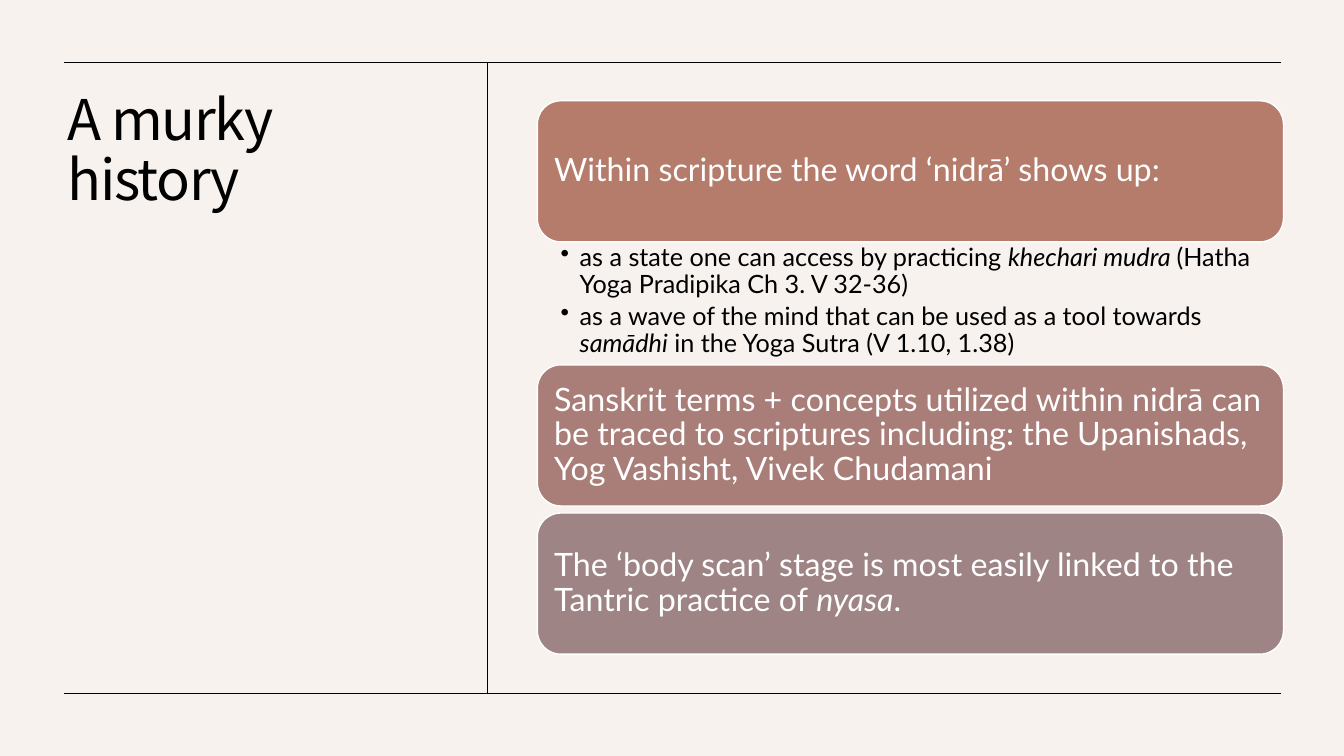
from dataclasses import dataclass

from lxml import etree
from pptx import Presentation
from pptx.dml.color import RGBColor
from pptx.enum import shapes, text
from pptx.oxml import ns
from pptx.util import Inches, Pt


@dataclass(frozen=True)
class Theme:
    background: str = "F7F2EE"
    ink: str = "000000"
    light: str = "FFFFFF"
    title_font: str = "Noto Sans CJK KR"
    body_font: str = "Lato"
    title_size: int = 40
    card_size: int = 23
    bullet_size: int = 18


theme = Theme()


def set_margins(frame, left, top, right, bottom):
    frame.word_wrap = True
    frame.auto_size = text.MSO_AUTO_SIZE.NONE
    frame.margin_left, frame.margin_top = Inches(left), Inches(top)
    frame.margin_right, frame.margin_bottom = Inches(right), Inches(bottom)


def add_runs(paragraph, pieces, font, size, color):
    """Fill a left-aligned paragraph; every second piece is italic."""
    paragraph.alignment = text.PP_ALIGN.LEFT
    paragraph.line_spacing = 0.9
    for index, piece in enumerate(pieces):
        run = paragraph.add_run()
        run.text = piece
        run.font.name = font
        run.font.size = Pt(size)
        run.font.italic = index % 2 == 1
        run.font.color.rgb = RGBColor.from_string(color)


presentation = Presentation()
presentation.slide_width = Inches(13.33)
presentation.slide_height = Inches(7.5)
slide = presentation.slides.add_slide(presentation.slide_layouts[5])
slide.background.fill.solid()
slide.background.fill.fore_color.rgb = RGBColor.from_string(theme.background)

# Title
title = slide.shapes.title
title.left, title.top = Inches(0.57), Inches(0.86)
title.width, title.height = Inches(3.77), Inches(5.52)
set_margins(title.text_frame, 0.1, 0.05, 0.1, 0.05)
title.text_frame.vertical_anchor = text.MSO_ANCHOR.TOP
title_paragraph = title.text_frame.paragraphs[0]
add_runs(title_paragraph, ["A murky history"], theme.title_font, theme.title_size, theme.ink)
title_paragraph.runs[0].font._element.set("spc", "-100")

# Frame rules
left, right, top, bottom, divider = 0.63, 12.71, 0.62, 6.88, 4.83
for x1, y1, x2, y2 in [
    (left, bottom, right, bottom),
    (divider, top, divider, bottom),
    (left, top, right, top),
]:
    rule = slide.shapes.add_connector(
        shapes.MSO_CONNECTOR.STRAIGHT, Inches(x1), Inches(y1), Inches(x2), Inches(y2))
    rule.line.color.rgb = RGBColor.from_string(theme.ink)
    rule.line.width = Pt(0.5)
    etree.SubElement(rule._element.spPr, ns.qn("a:effectLst"))

# Cards
column_left, column_width, card_height = Inches(5.33), Inches(7.4), Inches(1.4)
cards = [
    (1, "B57B6B", ["Within scripture the word ‘nidrā’ shows up:"]),
    (3.62, "A97D78", ["Sanskrit terms + concepts utilized within nidrā can be traced to "
                      "scriptures including: the Upanishads, Yog Vashisht, Vivek Chudamani"]),
    (5.09, "9E8484", ["The ‘body scan’ stage is most easily linked to the Tantric practice of ",
                      "nyasa", "."]),
]
for card_top, fill, pieces in cards:
    card = slide.shapes.add_shape(
        shapes.MSO_SHAPE.ROUNDED_RECTANGLE,
        column_left, Inches(card_top), column_width, card_height)
    card.shadow.inherit = False
    card.fill.solid()
    card.fill.fore_color.rgb = RGBColor.from_string(fill)
    card.line.color.rgb = RGBColor.from_string(theme.light)
    card.line.width = Pt(1)
    set_margins(card.text_frame, 0.1, 0.1, 0.1, 0.1)
    card.text_frame.vertical_anchor = text.MSO_ANCHOR.MIDDLE
    add_runs(card.text_frame.paragraphs[0], pieces,
             theme.body_font, theme.card_size, theme.light)

# Bullets under the first card
bullets = [
    ["as a state one can access by practicing ", "khechari mudra ",
     "(Hatha Yoga Pradipika Ch 3. V 32-36)"],
    ["as a wave of the mind that can be used as a tool towards ", "samādhi",
     " in the Yoga Sutra (V 1.10, 1.38)"],
]
bullet_box = slide.shapes.add_textbox(column_left, Inches(2.4), column_width, Inches(1.22))
frame = bullet_box.text_frame
set_margins(frame, 0.23, 0.03, 0.18, 0.03)
for index, pieces in enumerate(bullets):
    paragraph = frame.add_paragraph() if index else frame.paragraphs[0]
    paragraph.level = 1
    add_runs(paragraph, pieces, theme.body_font, theme.bullet_size, theme.ink)
    paragraph.space_after = Pt(3)
    properties = paragraph._p.get_or_add_pPr()
    properties.set("marL", str(Inches(0.19)))
    properties.set("indent", str(-Inches(0.19)))
    etree.SubElement(properties, ns.qn("a:buChar"), char="•")

presentation.save("out.pptx")
